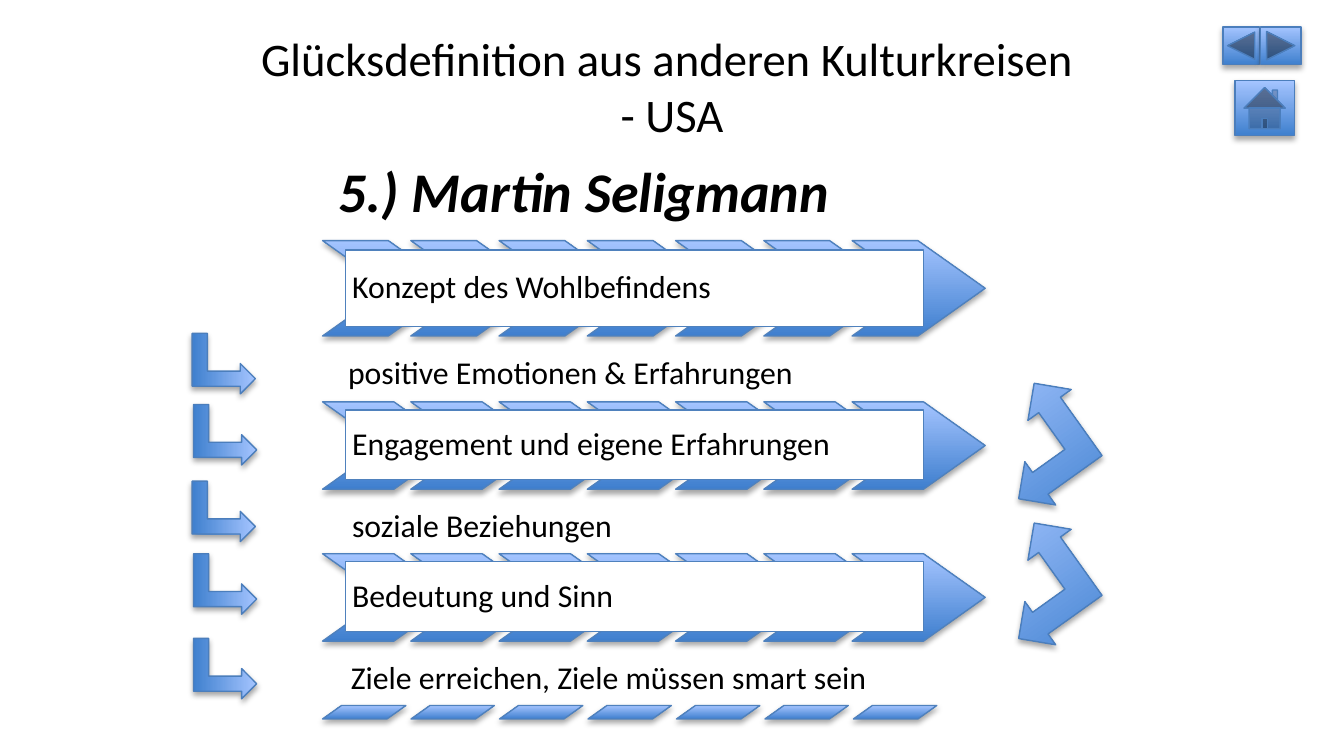
"""Build a slide on a happiness definition from the USA, with chevron bands and arrows."""
from typing import NamedTuple

from lxml.etree import SubElement
from pptx import Presentation
from pptx.dml.color import RGBColor
from pptx.enum.shapes import MSO_SHAPE
from pptx.enum.text import MSO_ANCHOR, PP_ALIGN
from pptx.oxml.ns import qn
from pptx.util import Inches, Pt

BUTTON_TONES = ("3F80CE", "A4C4FF", "4B7EBC")
BAND_TONES = ("3F7FCE", "A4C4FF", "4F81BD")
BAND_LEFT = 2.4
BAND_COUNT = 7
CHEVRON_SPAN = 3.94
STRIPE_SPAN = 3.95


class Frame(NamedTuple):
    left: float
    top: float
    width: float
    height: float

    def lengths(self):
        return [Inches(value) for value in self]


class Band(NamedTuple):
    top: float
    height: float
    text: str
    box_top: float
    box_height: float


class Caption(NamedTuple):
    frame: Frame
    text: str
    inset: float = 0.07
    size: float = 17
    strong: bool = False


class Button(NamedTuple):
    kind: MSO_SHAPE
    frame: Frame


BUTTONS = [
    Button(MSO_SHAPE.ACTION_BUTTON_BACK_OR_PREVIOUS, Frame(9.1, 0.2, 0.27, 0.28)),
    Button(MSO_SHAPE.ACTION_BUTTON_FORWARD_OR_NEXT, Frame(9.38, 0.2, 0.3, 0.28)),
    Button(MSO_SHAPE.ACTION_BUTTON_HOME, Frame(9.19, 0.6, 0.44, 0.41)),
]
BANDS = [
    Band(1.79, 0.71, "Konzept des Wohlbefindens", 1.86, 0.57),
    Band(2.99, 0.65, "Engagement und eigene Erfahrungen", 3.05, 0.52),
    Band(4.12, 0.65, "Bedeutung und Sinn", 4.18, 0.52),
]
CAPTIONS = [
    Caption(Frame(2.4, 1.37, 4.67, 0.42), "5.) Martin Seligmann", 0.12, 30, True),
    Caption(Frame(2.52, 2.56, 4.67, 0.42), "positive Emotionen & Erfahrungen"),
    Caption(Frame(2.55, 3.7, 4.67, 0.42), "soziale Beziehungen"),
    Caption(Frame(2.54, 4.83, 4.67, 0.42), "Ziele erreichen, Ziele müssen smart sein"),
]
BENT_ARROWS = [(1.44, 2.47), (1.45, 3), (1.44, 3.57), (1.45, 4.11), (1.45, 4.74)]
DOUBLE_ARROW_TOPS = [2.89, 3.93]


def colour(code: str) -> RGBColor:
    """Turn a hex string into a colour."""
    return RGBColor.from_string(code)


def add_shadow(shape) -> None:
    """Give the shape a soft shadow below it."""
    effects = SubElement(shape._element.spPr, qn("a:effectLst"))
    shadow = SubElement(effects, qn("a:outerShdw"), blurRad=str(Pt(3.1)),
                        dist=str(Pt(1.8)), dir="5400000", rotWithShape="0")
    black = SubElement(shadow, qn("a:srgbClr"), val="000000")
    SubElement(black, qn("a:alpha"), val="35000")


def add_glossy(page, kind: MSO_SHAPE, frame: Frame, tones: tuple = BUTTON_TONES,
               rotation: float = 0, adjustment: float | None = None) -> None:
    """Draw a shape with a blue gradient, an outline and a shadow."""
    shape = page.shapes.add_shape(kind, *frame.lengths())
    shape.rotation = rotation
    if adjustment is not None:
        shape.adjustments[0] = adjustment
    dark, light, edge = tones
    shape.fill.gradient()
    shape.fill.gradient_angle = 90
    for stop, code in zip(shape.fill.gradient_stops, (dark, light)):
        stop.color.rgb = colour(code)
    shape.line.color.rgb = colour(edge)
    shape.line.width = Pt(0.75)
    add_shadow(shape)


def write(shape, text: str, size: float, inset: float, anchor: MSO_ANCHOR,
          align: PP_ALIGN = PP_ALIGN.LEFT, spacing: float = 0.9,
          strong: bool = False) -> None:
    """Fill the shape with one paragraph of black text."""
    frame = shape.text_frame
    frame.word_wrap = True
    frame.vertical_anchor = anchor
    frame.margin_left = frame.margin_right = Inches(inset)
    frame.margin_top = frame.margin_bottom = Inches(inset)
    para = frame.paragraphs[0]
    para.text = text
    para.alignment = align
    para.line_spacing = spacing
    para.font.name = "Calibri"
    para.font.size = Pt(size)
    para.font.bold = para.font.italic = strong
    para.font.color.rgb = colour("000000")


def add_row(page, kind: MSO_SHAPE, span: float, first: Frame, adjustment: float) -> None:
    """Repeat the first band piece evenly along the span."""
    for index in range(BAND_COUNT):
        left = first.left + index * span / (BAND_COUNT - 1)
        add_glossy(page, kind, first._replace(left=left), BAND_TONES, adjustment=adjustment)


def add_band(page, band: Band) -> None:
    """Draw a row of chevrons with a white label on it."""
    first = Frame(BAND_LEFT, band.top, 0.99, band.height)
    add_row(page, MSO_SHAPE.CHEVRON, CHEVRON_SPAN, first, 0.706)
    frame = Frame(2.57, band.box_top, 4.3, band.box_height)
    box = page.shapes.add_shape(MSO_SHAPE.RECTANGLE, *frame.lengths())
    box.shadow.inherit = False
    box.fill.solid()
    box.fill.fore_color.rgb = colour("FFFFFF")
    box.line.color.rgb = colour("4F81BD")
    box.line.width = Pt(0.75)
    write(box, band.text, 17, 0.05, MSO_ANCHOR.MIDDLE)


def add_caption(page, caption: Caption) -> None:
    """Write a line of text that stands above a band."""
    box = page.shapes.add_textbox(*caption.frame.lengths())
    write(box, caption.text, caption.size, caption.inset, MSO_ANCHOR.BOTTOM,
          strong=caption.strong)


def main() -> None:
    """Build and save the deck."""
    deck = Presentation()
    deck.slide_width = Inches(10)
    deck.slide_height = deck.slide_width * 9 // 16
    page = deck.slides.add_slide(deck.slide_layouts[6])
    for button in BUTTONS[:2]:
        add_glossy(page, button.kind, button.frame)
    title = page.shapes.add_textbox(*Frame(0.5, 0.17, 9, 0.94).lengths())
    write(title, "Glücksdefinition aus anderen Kulturkreisen \v- USA", 25, 0.05,
          MSO_ANCHOR.MIDDLE, PP_ALIGN.CENTER, 1.0)
    add_glossy(page, BUTTONS[2].kind, BUTTONS[2].frame)
    for band in BANDS:
        add_band(page, band)
    for caption in CAPTIONS:
        add_caption(page, caption)
    first_stripe = Frame(BAND_LEFT, 5.25, 0.62, 0.1)
    add_row(page, MSO_SHAPE.PARALLELOGRAM, STRIPE_SPAN, first_stripe, 1.408)
    for left, top in BENT_ARROWS:
        add_glossy(page, MSO_SHAPE.BENT_UP_ARROW, Frame(left, top, 0.45, 0.47), rotation=90)
    for top in DOUBLE_ARROW_TOPS:
        add_glossy(page, MSO_SHAPE.LEFT_UP_ARROW, Frame(7.38, top, 0.79, 0.83), rotation=324.5)
    deck.save("out.pptx")


if __name__ == "__main__":
    main()
